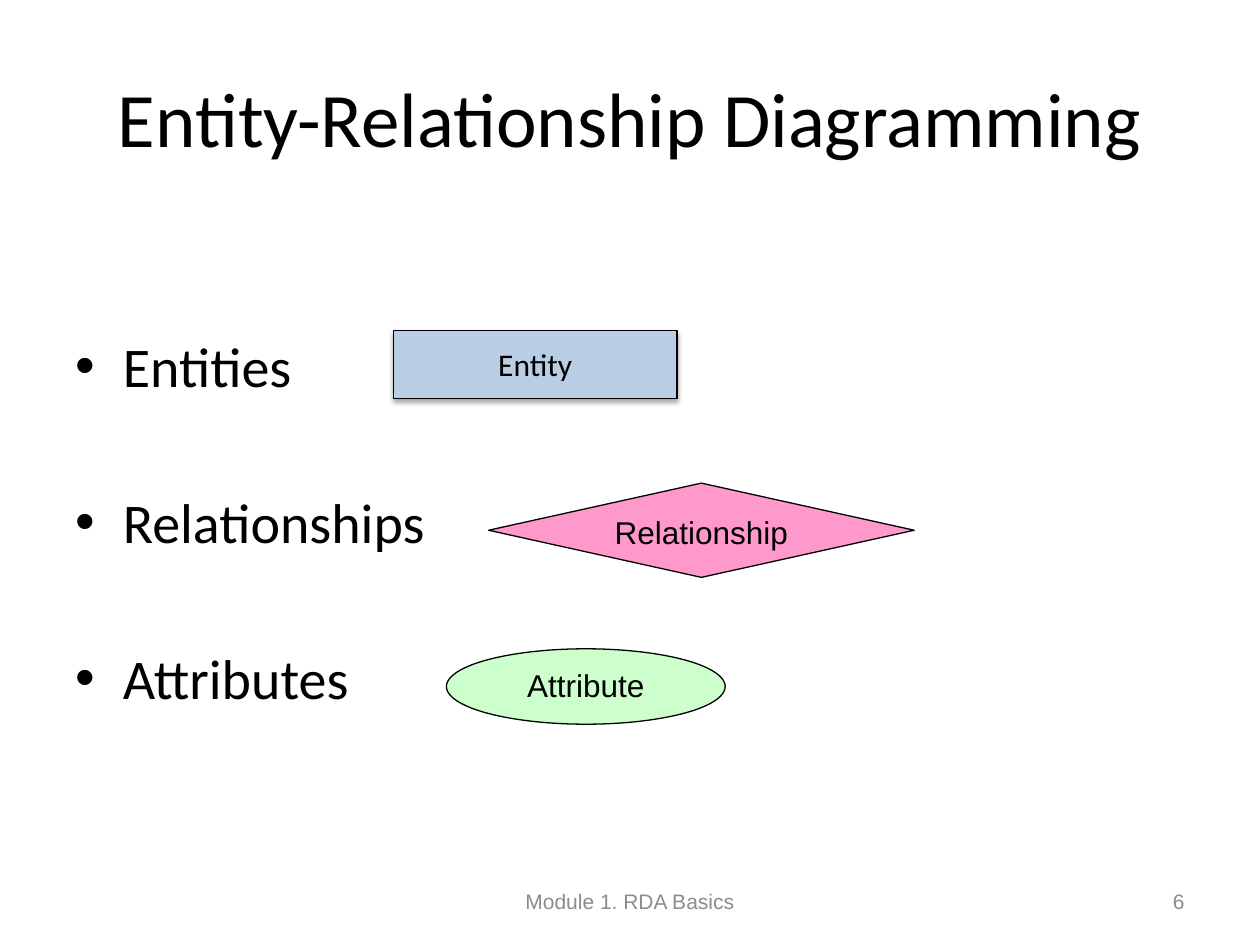
from lxml.etree import SubElement
from pptx import Presentation
from pptx.dml.color import RGBColor
from pptx.enum.shapes import MSO_SHAPE
from pptx.enum.text import MSO_ANCHOR, MSO_AUTO_SIZE, PP_ALIGN
from pptx.oxml.ns import qn
from pptx.util import Cm, Pt

COLORS = {
    "text": "000000",
    "footer": "8C8C8C",
    "entity": "B9CDE5",
    "relationship": "FF99CC",
    "attribute": "CCFFCC",
}


def color(name):
    return RGBColor.from_string(COLORS[name])


def place(shape, box):
    shape.left, shape.top, shape.width, shape.height = (Cm(length) for length in box)


def write(paragraph, text, size, font_name, color_name="text", alignment=None):
    paragraph.alignment = alignment
    run = paragraph.add_run()
    run.text = text
    run.font.size = Pt(size)
    run.font.name = font_name
    run.font.color.rgb = color(color_name)


def add_soft_shadow(shape):
    effects = shape._element.spPr.find(qn("a:effectLst"))
    shadow = SubElement(effects, qn("a:outerShdw"), blurRad="39400", dist="22900",
                        dir="5400000", rotWithShape="0")
    shadow_color = SubElement(shadow, qn("a:srgbClr"), val=COLORS["text"])
    SubElement(shadow_color, qn("a:alpha"), val="35000")


def fill_title(slide, box):
    title = slide.shapes.title
    place(title, box)
    frame = title.text_frame
    frame.auto_size = MSO_AUTO_SIZE.NONE
    frame.vertical_anchor = MSO_ANCHOR.MIDDLE
    write(frame.paragraphs[0], "Entity-Relationship Diagramming", 44, "Calibri",
          alignment=PP_ALIGN.CENTER)


def fill_list(slide, box):
    body = slide.placeholders[1]
    place(body, box)
    frame = body.text_frame
    frame.auto_size = MSO_AUTO_SIZE.NONE
    frame.vertical_anchor = MSO_ANCHOR.TOP
    for index, item in enumerate(("Entities", "Relationships", "Attributes")):
        paragraph = frame.add_paragraph() if index else frame.paragraphs[0]
        paragraph.space_before = Pt(50.6 if index else 0)
        write(paragraph, item, 32, "Calibri")


def add_symbol(slide, box, shape_type, text, fill, font_name, anchor):
    symbol = slide.shapes.add_shape(shape_type, *(Cm(length) for length in box))
    symbol.shadow.inherit = False
    symbol.fill.solid()
    symbol.fill.fore_color.rgb = color(fill)
    symbol.line.color.rgb = color("text")
    symbol.line.width = Pt(0.75)
    symbol.text_frame.vertical_anchor = anchor
    write(symbol.text_frame.paragraphs[0], text, 18, font_name,
          alignment=PP_ALIGN.CENTER)
    return symbol


def add_symbols(slide, box):
    left, top = box[:2]
    # Relationship diamond
    add_symbol(slide, (left + 1.92, top + 3.08, 8.58, 1.9),
               MSO_SHAPE.FLOWCHART_DECISION, "Relationship", "relationship",
               "Arial", MSO_ANCHOR.TOP)
    # Entity rectangle
    entity = add_symbol(slide, (left, top, 5.72, 1.37), MSO_SHAPE.RECTANGLE,
                        "Entity", "entity", "Calibri", MSO_ANCHOR.MIDDLE)
    add_soft_shadow(entity)
    # Attribute ellipse
    add_symbol(slide, (left + 1.07, top + 6.42, 5.62, 1.52), MSO_SHAPE.OVAL,
               "Attribute", "attribute", "Arial", MSO_ANCHOR.TOP)


def add_footer(slide, box):
    left, top, width, height = box
    number_width = 5.93
    parts = (
        ("Module 1. RDA Basics", left, 8.04, PP_ALIGN.CENTER),
        ("6", left + width - number_width, number_width, PP_ALIGN.RIGHT),
    )
    for text, part_left, part_width, alignment in parts:
        text_box = slide.shapes.add_textbox(Cm(part_left), Cm(top),
                                            Cm(part_width), Cm(height))
        frame = text_box.text_frame
        frame.word_wrap = True
        frame.vertical_anchor = MSO_ANCHOR.MIDDLE
        write(frame.paragraphs[0], text, 12, "Arial", "footer", alignment)


def main():
    presentation = Presentation()
    presentation.slide_width, presentation.slide_height = Cm(25.4), Cm(19.05)
    slide = presentation.slides.add_slide(presentation.slide_layouts[1])
    fill_title(slide, (1.27, 0.76, 22.86, 3.18))
    fill_list(slide, (1.27, 6.56, 22.86, 10.8))
    add_symbols(slide, (7.93, 6.66, 10.5, 7.94))
    add_footer(slide, (8.68, 17.66, 15.45, 1.01))
    presentation.save("out.pptx")


if __name__ == "__main__":
    main()
